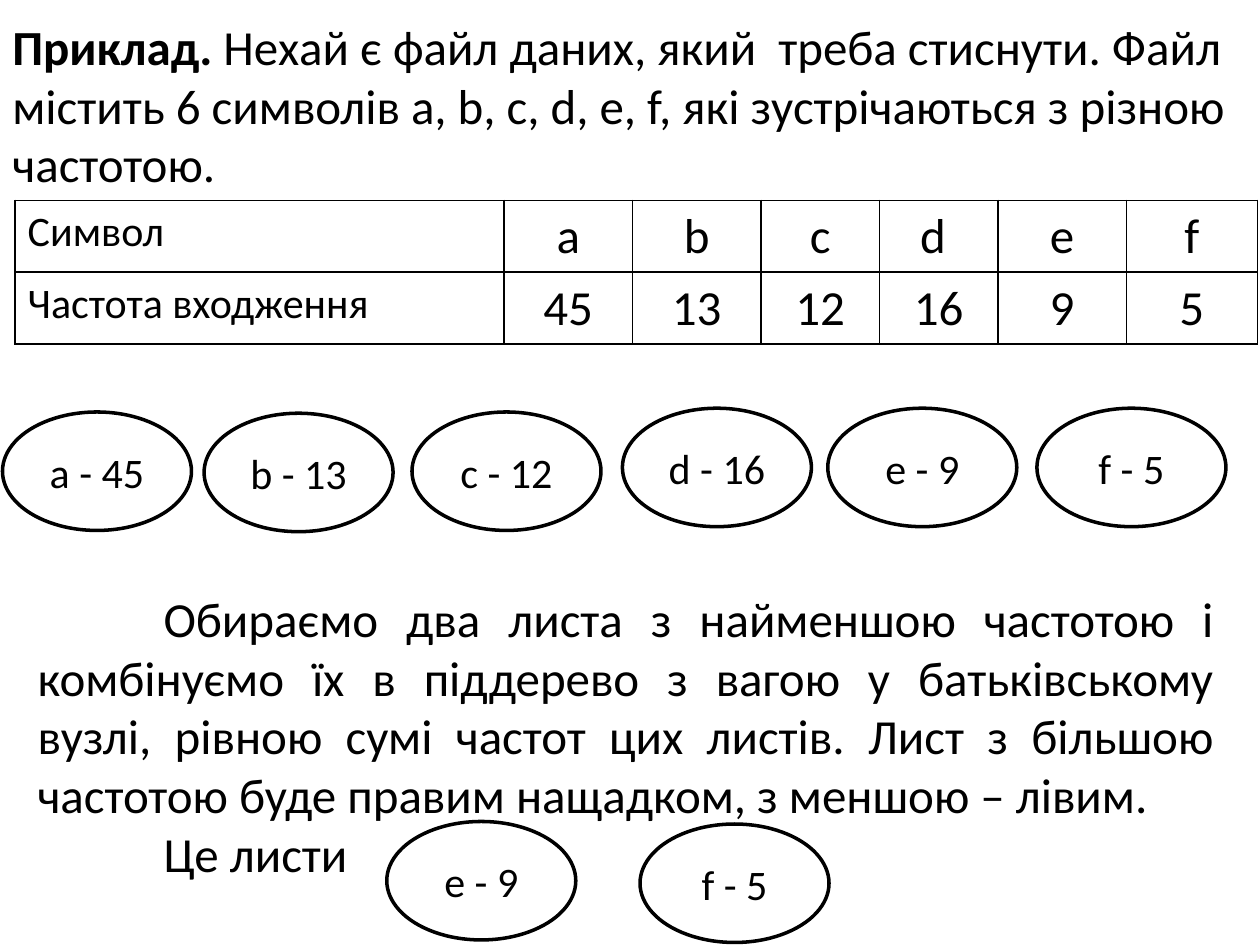
"""Build a slide on symbol frequencies and the first leaves of a Huffman tree."""
from lxml import etree
from pptx import Presentation
from pptx.dml.color import RGBColor
from pptx.enum import shapes, text
from pptx.oxml import ns
from pptx.util import Inches, Pt

BLACK = RGBColor(0, 0, 0)
WHITE = RGBColor(255, 255, 255)


def style(paragraph, size, align=text.PP_ALIGN.LEFT):
    paragraph.alignment = align
    paragraph.font.name = "Calibri"
    paragraph.font.size = Pt(size)
    paragraph.font.color.rgb = BLACK


def add_border(cell, side):
    line = etree.SubElement(cell._tc.get_or_add_tcPr(), ns.qn(f"a:{side}"), w=str(Pt(1)))
    fill = etree.SubElement(line, ns.qn("a:solidFill"))
    etree.SubElement(fill, ns.qn("a:srgbClr"), val=str(BLACK))


prs = Presentation()
prs.slide_width, prs.slide_height = Inches(10), Inches(7.5)
slide = prs.slides.add_slide(prs.slide_layouts[6])

example = slide.shapes.add_textbox(Inches(0), Inches(0.08), Inches(9.88), Inches(1.51)).text_frame
example.word_wrap = True
intro = example.paragraphs[0]
style(intro, 28)
heading = intro.add_run()
heading.text = "Приклад. "
heading.font.bold = True
intro.add_run().text = (
    "Нехай є файл даних, який  треба стиснути. Файл містить 6 символів "
    "a, b, c, d, e, f, які зустрічаються з різною частотою."
)

rows = [
    ["Символ", "a", "b", "c", "d ", "e", "f"],
    ["Частота входження", "45", "13", "12", "16", "9", "5"],
]
widths = [3.88, 1.02, 1.02, 0.94, 0.94, 1.02, 1.04]
frequencies = slide.shapes.add_table(
    len(rows), len(widths), Inches(0.12), Inches(1.59), Inches(9.88), Inches(1.14)
).table
frequencies.first_row = frequencies.horz_banding = False
for column, width in zip(frequencies.columns, widths):
    column.width = Inches(width)
for r, row in enumerate(rows):
    for c, value in enumerate(row):
        cell = frequencies.cell(r, c)
        cell.text = value
        if c == 0:
            style(cell.text_frame.paragraphs[0], 24)
        else:
            style(cell.text_frame.paragraphs[0], 28, text.PP_ALIGN.CENTER)
        for side in ("lnL", "lnR", "lnT", "lnB"):
            add_border(cell, side)
        cell.fill.background()

explanation = slide.shapes.add_textbox(
    Inches(0.2), Inches(4.62), Inches(9.53), Inches(2.46)
).text_frame
explanation.word_wrap = True
explanation.text = (
    "Обираємо два листа з найменшою частотою і комбінуємо їх в піддерево з вагою "
    "у батьківському вузлі, рівною сумі частот цих листів. Лист з більшою частотою "
    "буде правим нащадком, з меншою – лівим.\nЦе листи"
)
for paragraph in explanation.paragraphs:
    style(paragraph, 28, text.PP_ALIGN.JUSTIFY)
    paragraph._p.get_or_add_pPr().set("indent", str(Inches(1)))

leaves = [
    ("а - 45", 0.02, 3.27),
    ("b - 13", 1.62, 3.28),
    ("c - 12", 3.27, 3.27),
    ("d - 16", 4.94, 3.24),
    ("e - 9", 6.57, 3.24),
    ("f - 5", 8.23, 3.24),
    ("e - 9", 3.07, 6.52),
    ("f - 5", 5.08, 6.54),
]
for label, left, top in leaves:
    leaf = slide.shapes.add_shape(
        shapes.MSO_SHAPE.OVAL, Inches(left), Inches(top), Inches(1.5), Inches(0.94)
    )
    leaf.shadow.inherit = False
    leaf.fill.solid()
    leaf.fill.fore_color.rgb = WHITE
    leaf.line.color.rgb = BLACK
    leaf.line.width = Pt(2)
    leaf.text_frame.text = label
    leaf.text_frame.vertical_anchor = text.MSO_ANCHOR.MIDDLE
    style(leaf.text_frame.paragraphs[0], 24, text.PP_ALIGN.CENTER)

prs.save("out.pptx")
